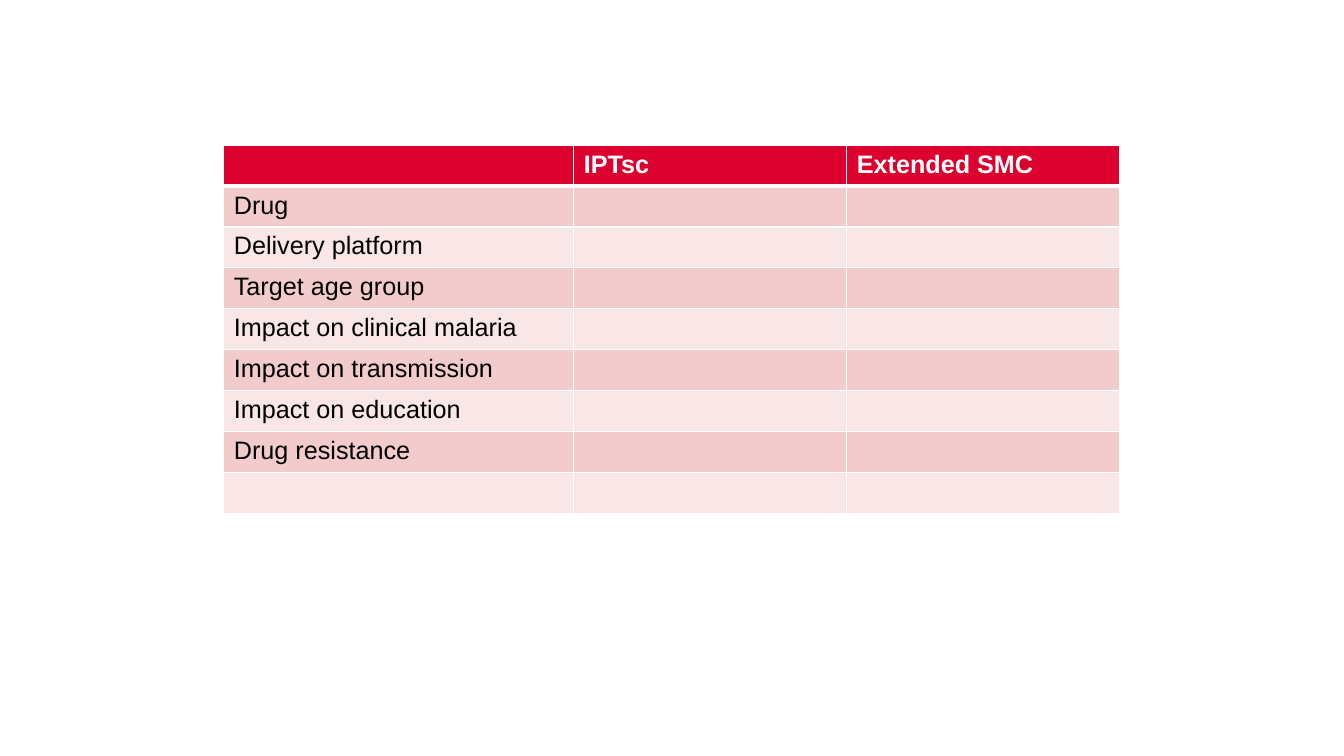
from lxml import etree
from pptx import Presentation
from pptx.dml.color import RGBColor
from pptx.enum.text import MSO_ANCHOR
from pptx.oxml.ns import qn
from pptx.util import Cm, Pt

TOP = MSO_ANCHOR.TOP
WHITE = RGBColor(0xFF, 0xFF, 0xFF)
BLACK = RGBColor(0x00, 0x00, 0x00)
RED = RGBColor(0xDC, 0x00, 0x2E)
ROSE = RGBColor(0xF2, 0xCC, 0xCD)
PALE_ROSE = RGBColor(0xF9, 0xE7, 0xE8)

HEADERS = ["", "IPTsc", "Extended SMC"]
TOPICS = [
    "Drug",
    "Delivery platform",
    "Target age group",
    "Impact on clinical malaria",
    "Impact on transmission",
    "Impact on education",
    "Drug resistance",
    "",
]
COLUMN_WIDTHS = [Cm(8.82), Cm(6.88), Cm(6.88)]
ROW_HEIGHT = Cm(1.03)


def add_border(cell, side, width):
    """Draw a white line on one side of a cell."""
    tc_pr = cell._tc.get_or_add_tcPr()
    line = etree.SubElement(tc_pr, qn(f"a:ln{side}"), w=str(Pt(width)))
    fill = etree.SubElement(line, qn("a:solidFill"))
    etree.SubElement(fill, qn("a:srgbClr"), val=str(WHITE))


def format_cell(cell, text, row):
    """Fill in a cell with the look of its row."""
    header = row == 0
    widths = {"L": 1, "R": 1, "T": 3 if row == 1 else 1, "B": 3 if header else 1}
    for side, width in widths.items():
        add_border(cell, side, width)
    cell.fill.solid()
    cell.fill.fore_color.rgb = RED if header else ROSE if row % 2 else PALE_ROSE
    cell.vertical_anchor = TOP
    cell.text = text
    font = cell.text_frame.paragraphs[0].font
    font.name = "Arial"
    font.size = Pt(18)
    font.bold = header
    font.color.rgb = WHITE if header else BLACK


def add_comparison_table(s, left, top):
    """Add the table that compares the two strategies."""
    rows = [HEADERS] + [[topic, "", ""] for topic in TOPICS]
    frame = s.shapes.add_table(len(rows), len(HEADERS), left, top,
                               sum(COLUMN_WIDTHS), ROW_HEIGHT * len(rows))
    table = frame.table
    for column, width in zip(table.columns, COLUMN_WIDTHS):
        column.width = width
    for i, texts in enumerate(rows):
        table.rows[i].height = ROW_HEIGHT
        for j, text in enumerate(texts):
            format_cell(table.cell(i, j), text, i)


def main():
    """Build the slide and save it."""
    prs = Presentation()
    prs.slide_width, prs.slide_height = Cm(33.87), Cm(19.05)
    s = prs.slides.add_slide(prs.slide_layouts[6])
    add_comparison_table(s, Cm(5.64), Cm(3.66))
    prs.save("out.pptx")


if __name__ == "__main__":
    main()
